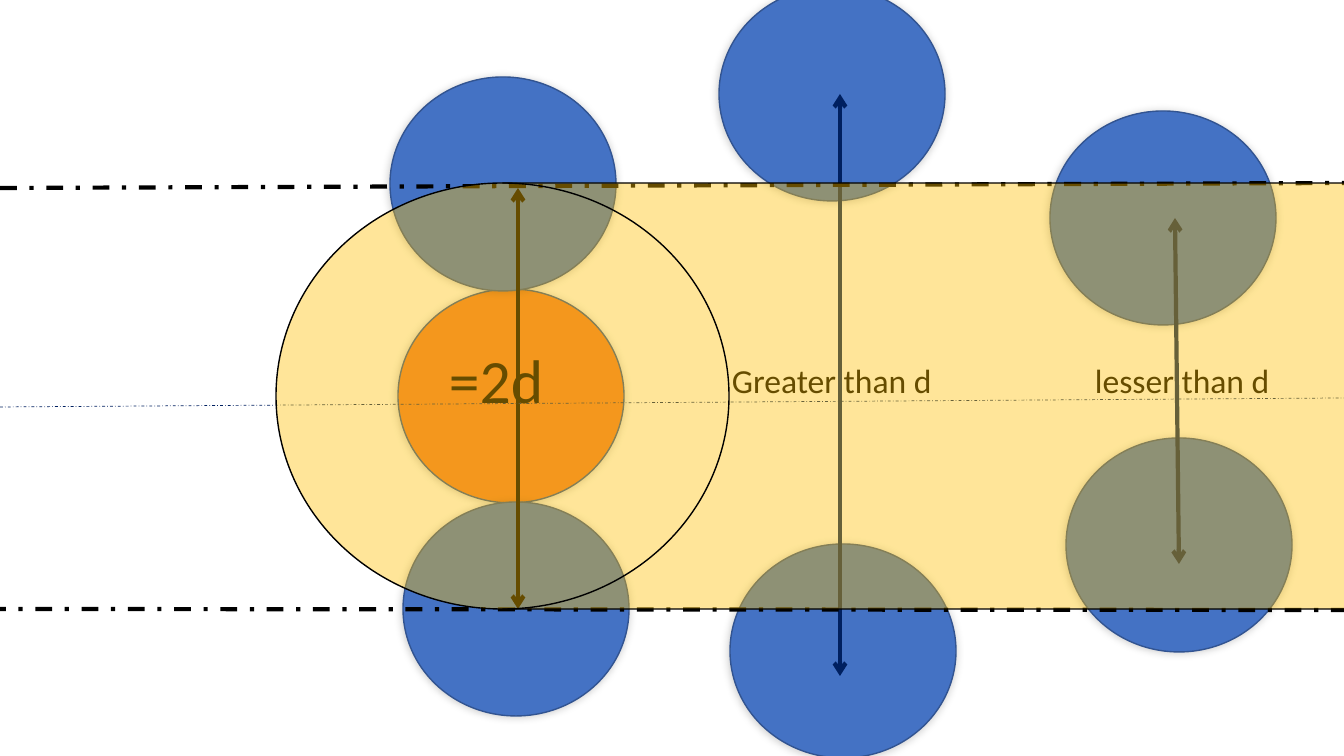
"""Build a slide comparing circle spacings of 2d, greater than d and lesser than d."""
from lxml.etree import SubElement
from pptx import Presentation
from pptx.dml.color import RGBColor
from pptx.enum.dml import MSO_LINE
from pptx.enum.shapes import MSO_CONNECTOR, MSO_SHAPE
from pptx.enum.text import MSO_AUTO_SIZE, PP_ALIGN
from pptx.oxml.ns import qn
from pptx.util import Emu, Pt

SLIDE_WIDTH, SLIDE_HEIGHT = 1344, 756
EMU_PER_PX = 12192000 / SLIDE_WIDTH
CIRCLE_WIDTH, CIRCLE_HEIGHT = 226, 214
BLACK = RGBColor(0x00, 0x00, 0x00)
NAVY = RGBColor(0x00, 0x20, 0x60)
BLUE = RGBColor(0x44, 0x72, 0xC4)
OUTLINE = RGBColor(0x32, 0x54, 0x91)
ORANGE = RGBColor(0xED, 0x7D, 0x31)
GOLD = RGBColor(0xFF, 0xC0, 0x00)


def px(*lengths):
    return [Emu(round(length * EMU_PER_PX)) for length in lengths]


def add_label(slide, text, *, box, size, color=BLACK, font="Calibri"):
    label = slide.shapes.add_textbox(*px(*box))
    frame = label.text_frame
    frame.word_wrap = False
    frame.auto_size = MSO_AUTO_SIZE.SHAPE_TO_FIT_TEXT
    paragraph = frame.paragraphs[0]
    paragraph.alignment = PP_ALIGN.LEFT
    run = paragraph.add_run()
    run.text = text
    run.font.name = font
    run.font.size = Pt(size)
    run.font.color.rgb = color


presentation = Presentation()
presentation.slide_width, presentation.slide_height = px(SLIDE_WIDTH, SLIDE_HEIGHT)
slide = presentation.slides.add_slide(presentation.slide_layouts[6])

circles = [
    (398, 289, ORANGE),
    (390, 77, BLUE),
    (403, 502, BLUE),
    (719, -13, BLUE),
    (730, 544, BLUE),
    (1050, 111, BLUE),
    (1066, 438, BLUE),
]
for left, top, color in circles:
    circle = slide.shapes.add_shape(
        MSO_SHAPE.OVAL, *px(left, top, CIRCLE_WIDTH, CIRCLE_HEIGHT)
    )
    circle.fill.solid()
    circle.fill.fore_color.rgb = color
    circle.line.color.rgb = OUTLINE
    circle.line.width = Pt(1)
    circle.shadow.inherit = False
    effects = circle._element.spPr.find(qn("a:effectLst"))
    shadow = SubElement(
        effects, qn("a:outerShdw"),
        blurRad=str(Pt(6)), dist=str(Pt(1)), dir=str(135 * 60000),
    )
    shadow_color = SubElement(shadow, qn("a:srgbClr"), val=str(BLACK))
    SubElement(shadow_color, qn("a:alpha"), val="20000")

lines = [
    ((518, 188, 518, 609), BLACK, 3, False),
    ((0, 407, 1344, 398), NAVY, 0.5, True),
    ((840, 94, 840, 676), NAVY, 3, False),
    ((1175, 218, 1179, 564), NAVY, 3, False),
    ((0, 188, 1344, 183), BLACK, 3, True),
    ((-11, 609, 1344, 610), BLACK, 3, True),
]
for ends, color, width, dashed in lines:
    connector = slide.shapes.add_connector(MSO_CONNECTOR.STRAIGHT, *px(*ends))
    connector.line.color.rgb = color
    connector.line.width = Pt(width)
    properties = connector._element.spPr
    if dashed:
        connector.line.dash_style = MSO_LINE.DASH_DOT
    else:
        for end in ("a:headEnd", "a:tailEnd"):
            SubElement(properties.find(qn("a:ln")), qn(end), type="arrow")
    SubElement(properties, qn("a:effectLst"))

add_label(slide, "=2d", box=(439, 337, 116, 85), size=44)
add_label(slide, "Greater than d", box=(722, 355, 222, 50), size=24)
add_label(slide, "lesser than d", box=(1085, 355, 197, 50), size=24)

drum = slide.shapes.add_shape(
    MSO_SHAPE.FLOWCHART_DIRECT_ACCESS_STORAGE, *px(276, 183, 1359, 426)
)
drum.rotation = 180
drum.fill.solid()
drum.fill.fore_color.rgb = GOLD
drum_color = drum._element.spPr.find(qn("a:solidFill")).find(qn("a:srgbClr"))
SubElement(drum_color, qn("a:alpha"), val="40000")
drum.line.color.rgb = BLACK
drum.line.width = Pt(1)
drum.shadow.inherit = False

presentation.save("out.pptx")
